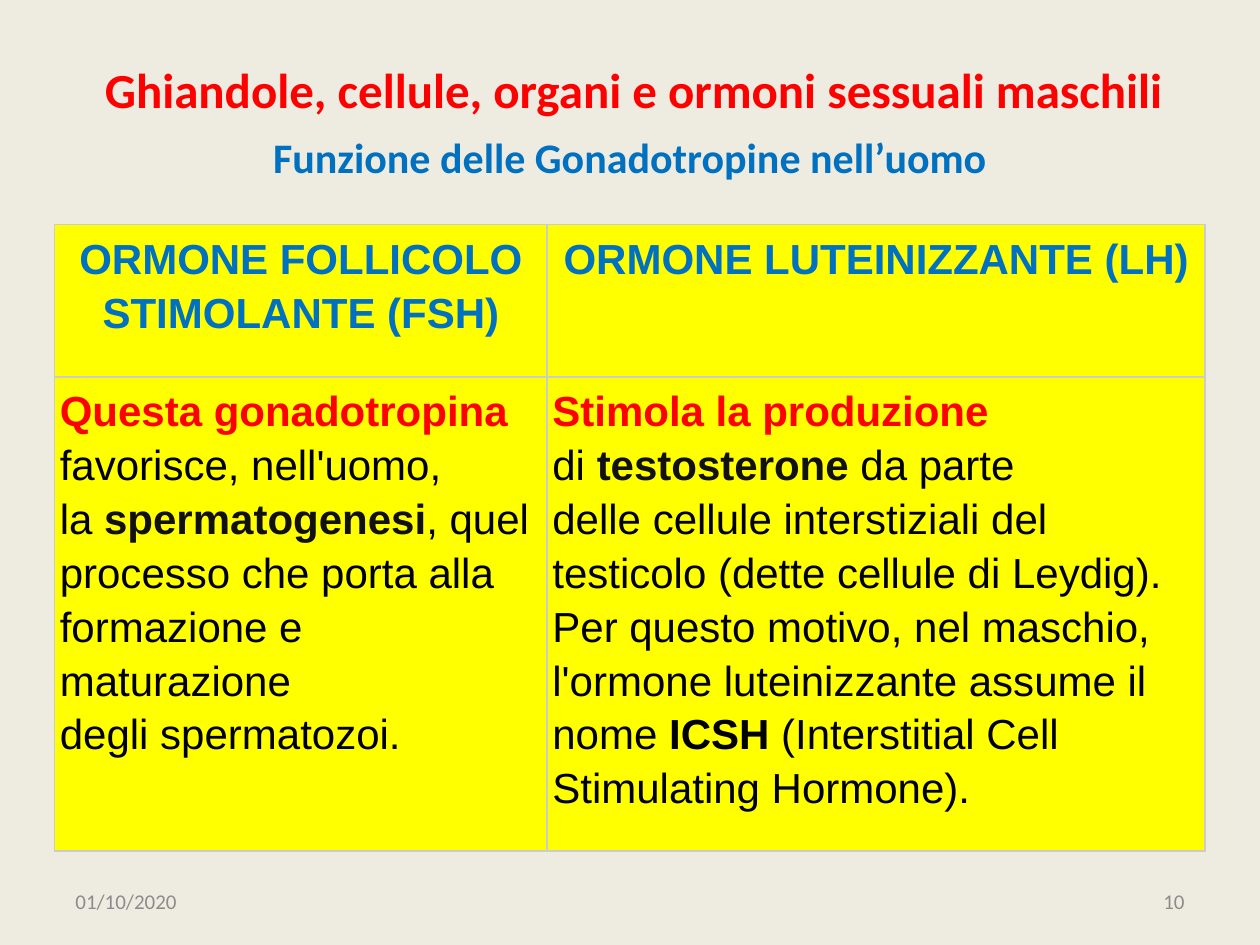
import pptx
import pptx.util
import pptx.dml.color
import pptx.enum.text
import pptx.oxml.ns
from lxml import etree

Pt = pptx.util.Pt
ALIGN = pptx.enum.text.PP_ALIGN
ANCHOR = pptx.enum.text.MSO_ANCHOR
HARD_SPACE = chr(160)

COLORS = {
    "background": "EEECE1",
    "red": "FF0000",
    "blue": "0070C0",
    "grey": "8C8C8C",
    "yellow": "FFFF00",
    "black": "000000",
    "dark": "111111",
    "border": "CCCCCC",
}

HEADERS = ["ORMONE FOLLICOLO STIMOLANTE (FSH)", "ORMONE LUTEINIZZANTE (LH)"]
DESCRIPTIONS = [
    [
        ("Questa gonadotropina ", "red", True),
        (f"favorisce, nell'uomo, la{HARD_SPACE}", "black", False),
        ("spermatogenesi", "dark", True),
        (", quel processo che porta alla formazione e maturazione "
         f"degli{HARD_SPACE}spermatozoi.", "black", False),
    ],
    [
        ("Stimola la produzione ", "red", True),
        (f"di{HARD_SPACE}", "black", False),
        ("testosterone", "dark", True),
        (f"{HARD_SPACE}da parte delle{HARD_SPACE}cellule interstiziali del testicolo "
         "(dette cellule di Leydig). Per questo motivo, nel maschio, "
         "l'ormone luteinizzante assume il nome ", "black", False),
        ("ICSH ", "black", True),
        ("(Interstitial Cell Stimulating Hormone).", "black", False),
    ],
]


def rgb(name):
    return pptx.dml.color.RGBColor.from_string(COLORS[name])


def style_font(font, color, bold, size, name):
    font.color.rgb = rgb(color)
    font.bold = bold
    font.size = Pt(size)
    font.name = name


def add_label(slide, box, text, size, color, align, bold=False, anchor=ANCHOR.MIDDLE):
    shape = slide.shapes.add_textbox(*map(Pt, box))
    frame = shape.text_frame
    frame.word_wrap = True
    frame.vertical_anchor = anchor
    paragraph = frame.paragraphs[0]
    paragraph.text = text
    paragraph.alignment = align
    style_font(paragraph.font, color, bold, size, "Calibri")


def add_heading(slide, box):
    left, top, width, height = box
    add_label(slide, (left, top, width, 51), "Ghiandole, cellule, organi e ormoni sessuali maschili",
              28, "red", ALIGN.CENTER, True)
    add_label(slide, (left, top + height - 36, width - 4, 36), "Funzione delle Gonadotropine nell’uomo",
              24, "blue", ALIGN.CENTER, True, ANCHOR.TOP)


def set_borders(cell):
    properties = cell._tc.get_or_add_tcPr()
    for position, side in enumerate(("lnL", "lnR", "lnT", "lnB")):
        line = etree.Element(pptx.oxml.ns.qn(f"a:{side}"), w=str(Pt(1)))
        fill = etree.SubElement(line, pptx.oxml.ns.qn("a:solidFill"))
        etree.SubElement(fill, pptx.oxml.ns.qn("a:srgbClr"), val=COLORS["border"])
        properties.insert(position, line)


def prepare_cell(cell):
    cell.fill.solid()
    cell.fill.fore_color.rgb = rgb("yellow")
    cell.margin_left = cell.margin_right = cell.margin_top = cell.margin_bottom = Pt(3)
    set_borders(cell)
    paragraph = cell.text_frame.paragraphs[0]
    paragraph.line_spacing = 1.15
    return paragraph


def add_hormone_table(slide, box):
    left, top, width, height = box
    table = slide.shapes.add_table(2, 2, *map(Pt, box)).table
    table.horz_banding = False
    first_width, header_height = 281.5, 87
    table.columns[0].width = Pt(first_width)
    table.columns[1].width = Pt(width - first_width)
    table.rows[0].height = Pt(header_height)
    table.rows[1].height = Pt(height - header_height)
    for column, (header, description) in enumerate(zip(HEADERS, DESCRIPTIONS)):
        paragraph = prepare_cell(table.cell(0, column))
        paragraph.text = header
        paragraph.alignment = ALIGN.CENTER
        paragraph.space_after = Pt(10)
        style_font(paragraph.font, "blue", True, 24, "Arial")

        paragraph = prepare_cell(table.cell(1, column))
        paragraph.alignment = ALIGN.LEFT
        for text, color, bold in description:
            run = paragraph.add_run()
            run.text = text
            style_font(run.font, color, bold, 24, "Arial")


def add_footer(slide, box):
    left, top, width, height = box
    part = 168
    add_label(slide, (left, top, part, height), "01/10/2020", 12, "grey", ALIGN.LEFT)
    add_label(slide, (left + width - part, top, part, height), "10", 12, "grey", ALIGN.RIGHT)


def main():
    presentation = pptx.Presentation()
    presentation.slide_width = Pt(720)
    presentation.slide_height = Pt(540)
    slide = presentation.slides.add_slide(presentation.slide_layouts[6])
    slide.background.fill.solid()
    slide.background.fill.fore_color.rgb = rgb("background")
    add_heading(slide, (26, 25.2, 672, 82.2))
    add_hormone_table(slide, (31.2, 128.3, 657.5, 358))
    add_footer(slide, (36, 500.5, 648, 29))
    presentation.save("out.pptx")


if __name__ == "__main__":
    main()
